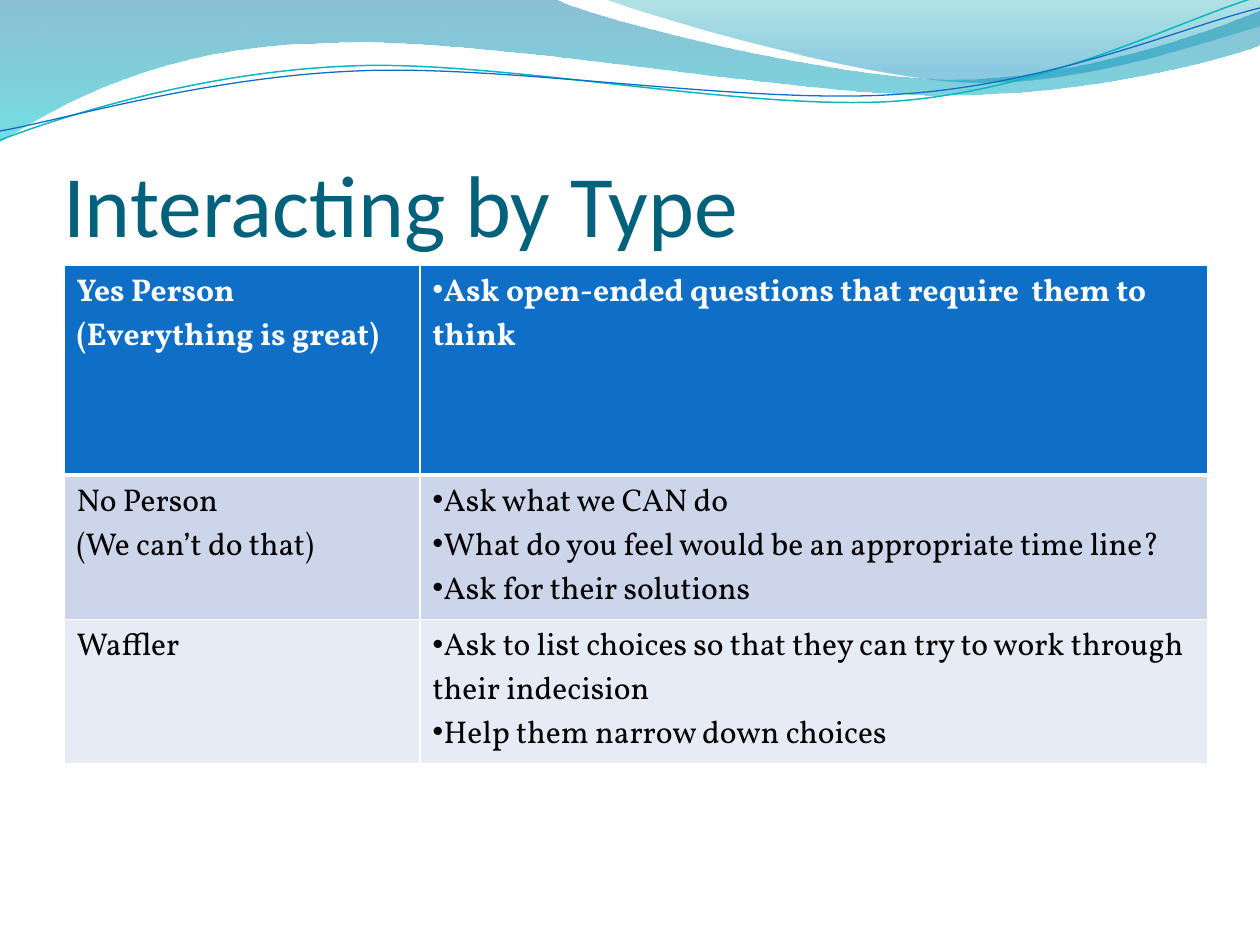
import lxml.etree
import pptx
import pptx.dml.color
import pptx.enum.text
import pptx.oxml.ns
import pptx.util

SCALE = 914400 / 126  # EMU per px
COLORS = {
    "title": "04617B", "white": "FFFFFF", "black": "000000",
    "header": "0F6FC6", "band_dark": "CCD5EA", "band_light": "E7EBF5",
    "teal_line": "0AB8BF", "blue_line": "0F6FC6",
    "deep_blue": "0074A1", "cyan": "00C6CF", "sea": "00A1A9", "sky": "008BBF",
}

# Each wave is a start point, then segments: 1 point is a line, 3 are a Bezier curve.
BROAD_WAVE = [
    [(0, 0)], [(554, -1)],
    [(600, 21), (837, 79), (955, 79)], [(1075, 79), (1207, 33), (1260, 11)],
    [(1261, 45)],
    [(1237, 55), (1096, 96), (940, 95)], [(784, 95), (481, 35), (324, 43)],
    [(163, 45), (58, 105), (-1, 142)],
]
RIGHT_WAVE = [
    [(604, -1)],
    [(641, 14), (859, 78), (969, 82)], [(1079, 86), (1211, 40), (1260, 26)],
    [(1260, 0)],
]
TEAL_CURVE = [
    [(0, 140)],
    [(60, 117), (199, 72), (349, 66)], [(498, 59), (747, 112), (898, 101)],
    [(1050, 89), (1182, 19), (1257, -3)],
]
BLUE_CURVE = [
    [(0, 131)],
    [(59, 121), (205, 77), (357, 71)], [(508, 64), (752, 106), (903, 94)],
    [(1053, 84), (1186, 26), (1260, 8)],
]

ROWS = [
    (["Yes Person", "(Everything is great)"],
     ["Ask open-ended questions that require  them to think"]),
    (["No Person", "(We can’t do that)"],
     ["Ask what we CAN do",
      "What do you feel would be an appropriate time line?",
      "Ask for their solutions"]),
    (["Waffler"],
     ["Ask to list choices so that they can try to work through their indecision",
      "Help them narrow down choices"]),
]
COL_WIDTHS = [356, 788]
ROW_HEIGHTS = [210, 122, 122]
ROW_FILLS = ["header", "band_dark", "band_light"]


def px(n):
    return pptx.util.Emu(round(n * SCALE))


def rgb(name):
    return pptx.dml.color.RGBColor.from_string(COLORS[name])


def sub(parent, tag, **attrs):
    el = lxml.etree.SubElement(parent, pptx.oxml.ns.qn(tag))
    for key, value in attrs.items():
        el.set(key, str(value))
    return el


def write_text(tf, lines, size, font, color, bold=False, bullet=None):
    for i, line in enumerate(lines):
        p = tf.paragraphs[0] if i == 0 else tf.add_paragraph()
        p.alignment = pptx.enum.text.PP_ALIGN.LEFT
        if bullet:
            pPr = p._p.get_or_add_pPr()
            pPr.set("marL", "0")
            pPr.set("indent", "0")
            sub(pPr, "a:buChar", char=bullet)
        r = p.add_run()
        r.text = line
        r.font.size = pptx.util.Pt(size)
        r.font.name = font
        r.font.bold = bold
        r.font.color.rgb = rgb(color)


def add_wave(s, segments, closed):
    """Build a freeform on all points, then turn each three-point run into a curve."""
    points = [pt for seg in segments for pt in seg]
    builder = s.shapes.build_freeform(*points[0], scale=SCALE)
    builder.add_line_segments(points[1:], close=closed)
    sp = builder.convert_to_shape()
    sp.shadow.inherit = False
    lines = iter(list(sp._element.iter(pptx.oxml.ns.qn("a:lnTo"))))
    for seg in segments[1:]:
        parts = [next(lines) for _ in seg]
        if len(parts) == 3:
            curve = lxml.etree.Element(pptx.oxml.ns.qn("a:cubicBezTo"))
            parts[0].addprevious(curve)
            for part in parts:
                curve.append(part[0])
                part.getparent().remove(part)
    return sp


def add_filled_wave(s, segments, stops):
    """Fill from top to bottom; each stop is (position, color, opacity percent)."""
    sp = add_wave(s, segments, closed=True)
    sp.line.fill.background()
    sp.fill.gradient()
    sp.fill.gradient_angle = 270
    for stop, (position, color, opacity) in zip(sp.fill.gradient_stops, stops):
        stop.position = position
        stop.color.rgb = rgb(color)
        clr = stop._gs.find(pptx.oxml.ns.qn("a:srgbClr"))
        sub(clr, "a:alpha", val=opacity * 1000)


def add_line_wave(s, segments, color, width):
    sp = add_wave(s, segments, closed=False)
    sp.fill.background()
    sp.line.color.rgb = rgb(color)
    sp.line.width = pptx.util.Pt(width)


def set_title(s, text):
    sp = s.shapes.title
    sp.left, sp.top, sp.width, sp.height = px(63), px(97), px(1134), px(158)
    tf = sp.text_frame
    tf.word_wrap = True
    tf.auto_size = pptx.enum.text.MSO_AUTO_SIZE.NONE
    tf.vertical_anchor = pptx.enum.text.MSO_ANCHOR.BOTTOM
    tf.margin_left = tf.margin_right = tf.margin_bottom = 0
    tf.margin_top = pptx.util.Inches(0.05)
    write_text(tf, [text], size=50, font="Calibri", color="title")
    s.shapes._spTree.append(sp._element)  # in front of the waves


def set_borders(cell, top, bottom):
    tcPr = cell._tc.get_or_add_tcPr()
    for side, width in (("L", 1), ("R", 1), ("T", top), ("B", bottom)):
        ln = sub(tcPr, "a:ln" + side, w=pptx.util.Pt(width))
        sub(sub(ln, "a:solidFill"), "a:srgbClr", val=COLORS["white"])


def add_type_table(s):
    frame = s.shapes.add_table(len(ROWS), len(COL_WIDTHS), px(64), px(265),
                               px(sum(COL_WIDTHS)), px(sum(ROW_HEIGHTS)))
    table = frame.table
    table.horz_banding = False
    for col, width in zip(table.columns, COL_WIDTHS):
        col.width = px(width)
    for i, lists in enumerate(ROWS):
        table.rows[i].height = px(ROW_HEIGHTS[i])
        for j, lines in enumerate(lists):
            cell = table.cell(i, j)
            set_borders(cell, top=3 if i == 1 else 1, bottom=3 if i == 0 else 1)
            cell.fill.solid()
            cell.fill.fore_color.rgb = rgb(ROW_FILLS[i])
            write_text(cell.text_frame, lines, size=18, font="Vollkorn",
                       color="white" if i == 0 else "black", bold=i == 0,
                       bullet="•" if j == 1 else None)


def main():
    prs = pptx.Presentation()
    prs.slide_width, prs.slide_height = px(1260), px(945)
    s = prs.slides.add_slide(prs.slide_layouts[5])
    add_filled_wave(s, BROAD_WAVE, [(0, "deep_blue", 45), (1, "cyan", 55)])
    add_filled_wave(s, RIGHT_WAVE, [(0, "sea", 30), (0.8, "sky", 45)])
    add_line_wave(s, TEAL_CURVE, "teal_line", 0.85)
    add_line_wave(s, BLUE_CURVE, "blue_line", 0.75)
    set_title(s, "Interacting by Type")
    add_type_table(s)
    prs.save("out.pptx")


if __name__ == "__main__":
    main()
